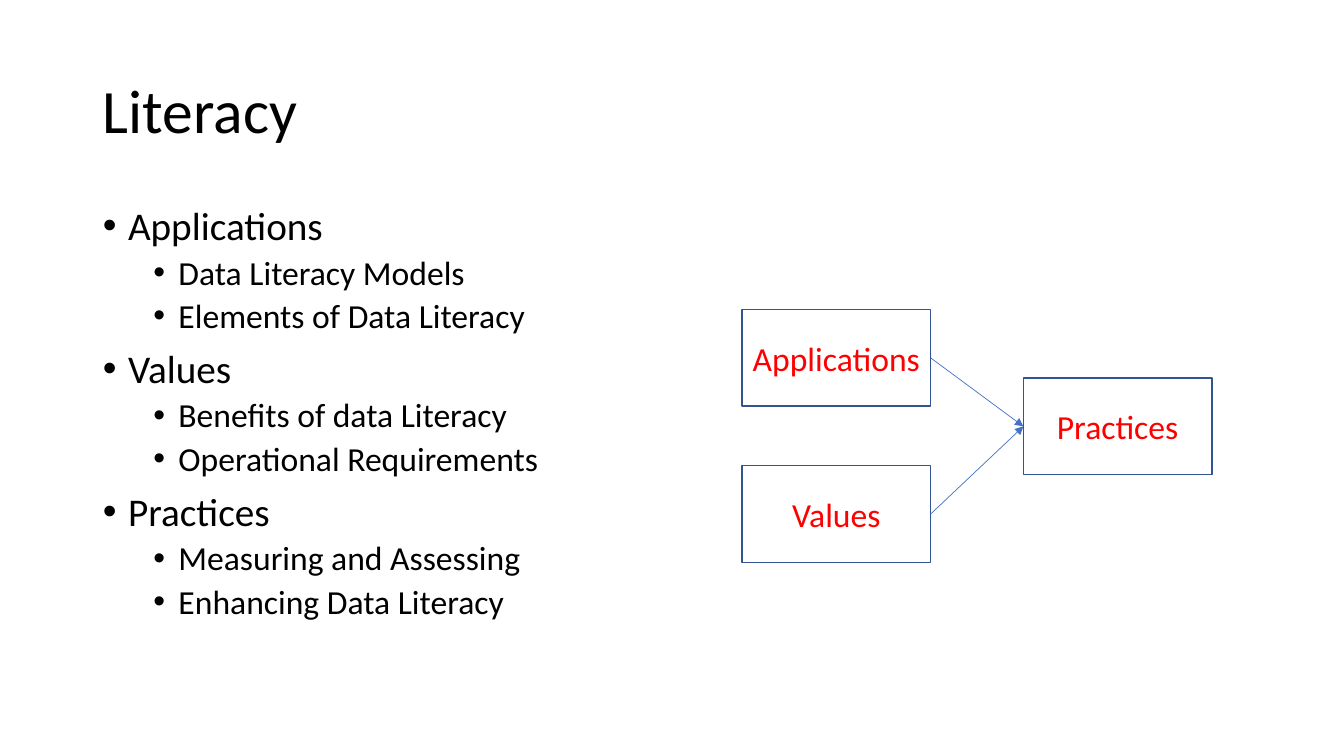
from lxml.etree import SubElement
from pptx import Presentation
from pptx.dml.color import RGBColor
from pptx.enum.shapes import MSO_CONNECTOR as CONNECTOR, MSO_SHAPE as SHAPE
from pptx.enum.text import MSO_ANCHOR as ANCHOR, MSO_AUTO_SIZE as AUTO_SIZE, PP_ALIGN as ALIGN
from pptx.oxml.ns import qn
from pptx.util import Inches, Pt

COLORS = {"text": "000000", "label": "FF0000", "border": "325491", "arrow": "4472C4"}
FONT = "Calibri"
OUTLINE = {
    "Applications": ["Data Literacy Models", "Elements of Data Literacy"],
    "Values": ["Benefits of data Literacy", "Operational Requirements"],
    "Practices": ["Measuring and Assessing", "Enhancing Data Literacy"],
}
BOX_WIDTH, BOX_HEIGHT = 1.87, 0.96
BOX_POSITIONS = {"Applications": (7.36, 3.07), "Values": (7.36, 4.62), "Practices": (10.15, 3.75)}


def style_font(paragraph, size, color):
    paragraph.font.name = FONT
    paragraph.font.size = Pt(size)
    paragraph.font.color.rgb = RGBColor.from_string(COLORS[color])


def place(shape, left, top, width, height):
    shape.left, shape.top = Inches(left), Inches(top)
    shape.width, shape.height = Inches(width), Inches(height)


presentation = Presentation()
presentation.slide_width, presentation.slide_height = Inches(13.33), Inches(7.5)
slide = presentation.slides.add_slide(presentation.slide_layouts[1])

# Title
title = slide.shapes.title
place(title, 0.92, 0.4, 11.5, 1.45)
title.text_frame.text = "Literacy"
title.text_frame.auto_size = AUTO_SIZE.NONE
title.text_frame.vertical_anchor = ANCHOR.MIDDLE
paragraph = title.text_frame.paragraphs[0]
paragraph.alignment = ALIGN.LEFT
paragraph.line_spacing = 0.9
style_font(paragraph, 44, "text")

# Two-level bullet list
body = slide.placeholders[1]
place(body, 0.92, 2, 11.5, 4.76)
body.text_frame.auto_size = AUTO_SIZE.NONE
entries = []
for topic, details in OUTLINE.items():
    entries += [(topic, 0)] + [(detail, 1) for detail in details]
for index, (text, level) in enumerate(entries):
    paragraph = body.text_frame.add_paragraph() if index else body.text_frame.paragraphs[0]
    paragraph.text = text
    paragraph.level = level
    paragraph.line_spacing = 0.9
    paragraph.space_before = Pt(5 if level else 10)
    style_font(paragraph, 24 if level else 28, "text")
    properties = paragraph._p.get_or_add_pPr()
    properties.set("marL", str(Inches(0.25 + 0.5 * level)))
    properties.set("indent", str(Inches(-0.25)))
    SubElement(properties, qn("a:buFont"), typeface="Arial")
    SubElement(properties, qn("a:buChar"), char="•")

# Diagram boxes
boxes = {}
for label, (left, top) in BOX_POSITIONS.items():
    box = slide.shapes.add_shape(
        SHAPE.RECTANGLE, Inches(left), Inches(top), Inches(BOX_WIDTH), Inches(BOX_HEIGHT))
    box.shadow.inherit = False
    box.fill.background()
    box.line.color.rgb = RGBColor.from_string(COLORS["border"])
    box.line.width = Pt(1)
    box.text_frame.text = label
    box.text_frame.vertical_anchor = ANCHOR.MIDDLE
    paragraph = box.text_frame.paragraphs[0]
    paragraph.alignment = ALIGN.CENTER
    style_font(paragraph, 24, "label")
    boxes[label] = box

# Arrows from both sources into Practices
for source in ("Applications", "Values"):
    arrow = slide.shapes.add_connector(CONNECTOR.STRAIGHT, 0, 0, 0, 0)
    arrow.begin_connect(boxes[source], 3)
    arrow.end_connect(boxes["Practices"], 1)
    arrow.line.color.rgb = RGBColor.from_string(COLORS["arrow"])
    arrow.line.width = Pt(0.5)
    SubElement(arrow.line._get_or_add_ln(), qn("a:tailEnd"), type="triangle")
    SubElement(arrow._element.spPr, qn("a:effectLst"))

presentation.save("out.pptx")
